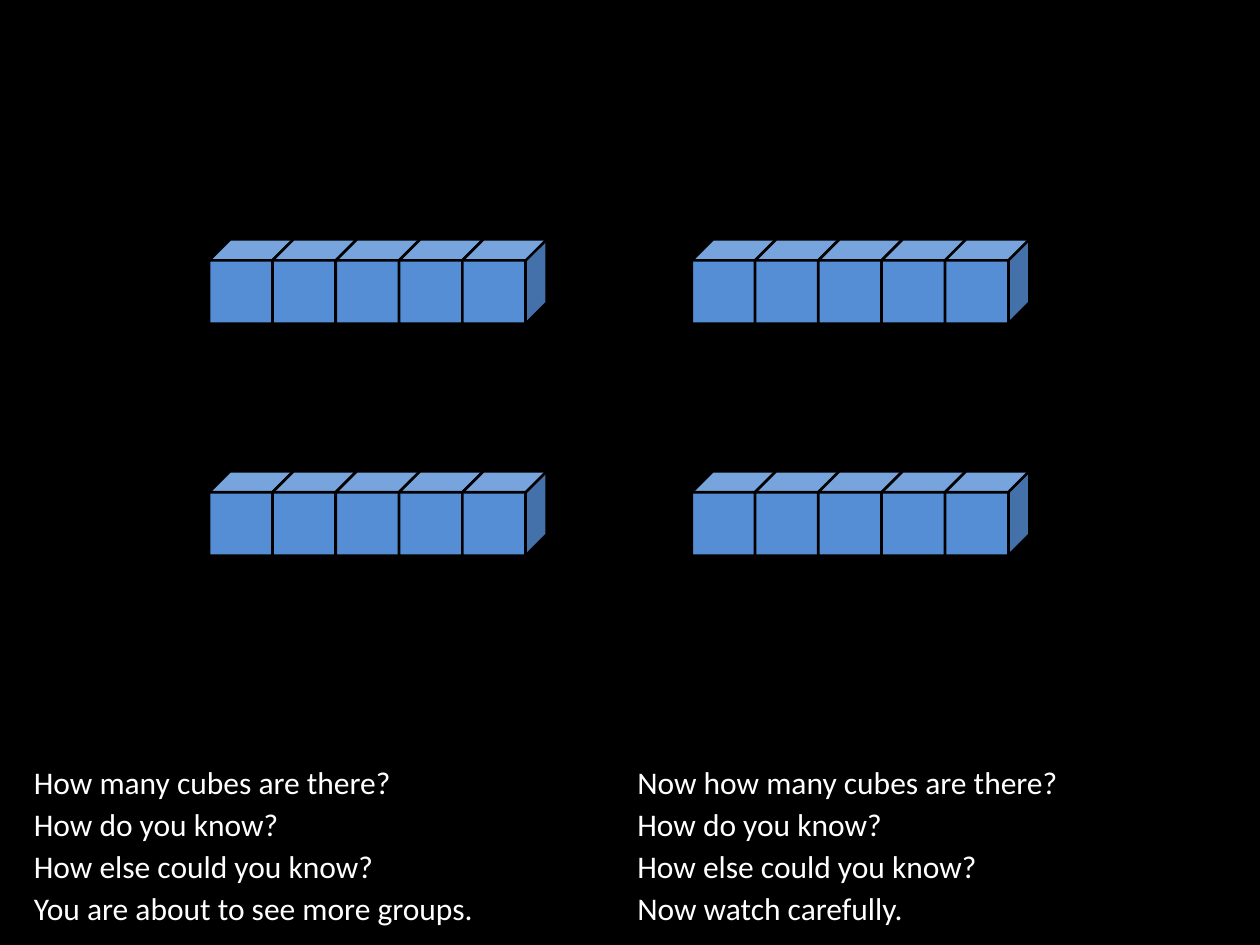
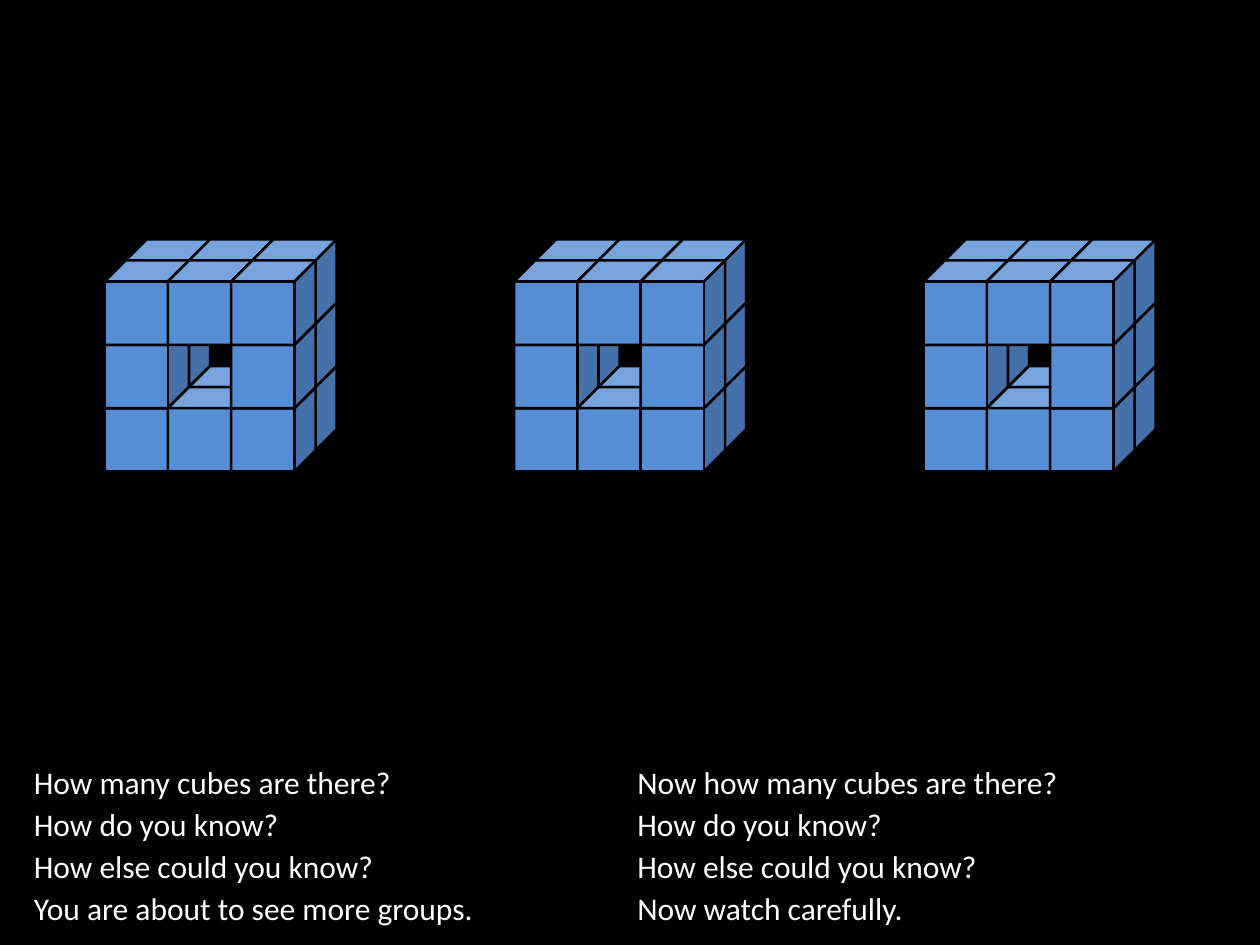
from itertools import product

from pptx import Presentation
from pptx.dml.color import RGBColor
from pptx.enum.shapes import MSO_SHAPE as Shape
from pptx.enum.text import MSO_AUTO_SIZE as Fit
from pptx.util import Inches, Pt

COLORS = {"back": "000000", "cube": "558ED5", "edge": "000000", "text": "FFFFFF"}
FONT = "Calibri"
SIDE = 0.67
DEPTH = SIDE / 4  # a cube's default slant
PITCH = SIDE - DEPTH  # the width of a cube's front face

# Each prompt comes with the width of its box.
PROMPTS = {
    0.17: [
        ("How many cubes are there?", 3.11),
        ("How do you know?", 2.21),
        ("How else could you know?", 2.98),
        ("You are about to see more groups.", 3.79),
    ],
    4.96: [
        ("Now how many cubes are there?", 3.58),
        ("How do you know?", 2.21),
        ("How else could you know?", 2.98),
        ("Now watch carefully.", 2.33),
    ],
}


def color(name):
    return RGBColor.from_string(COLORS[name])


def add_cube(group, left, top):
    cube = group.shapes.add_shape(
        Shape.CUBE, Inches(left), Inches(top), Inches(SIDE), Inches(SIDE)
    )
    cube.shadow.inherit = False
    cube.fill.solid()
    cube.fill.fore_color.rgb = color("cube")
    cube.line.color.rgb = color("edge")
    cube.line.width = Pt(1.5)


def add_row(slide, left, top, count=5):
    group = slide.shapes.add_group_shape()
    for col in range(count):
        add_cube(group, left + col * PITCH, top)


def add_ring(slide, left, top):
    """Stack two 3 by 3 layers without their middle cubes, back layer first."""
    group = slide.shapes.add_group_shape()
    for layer, col, row in product((1, 0), range(3), (2, 1, 0)):
        if (col, row) != (1, 1):
            add_cube(
                group,
                left + col * PITCH + layer * DEPTH,
                top + row * PITCH + (1 - layer) * DEPTH,
            )


def add_prompts(slide, left, top, lines):
    for i, (text, width) in enumerate(lines):
        box = slide.shapes.add_textbox(
            Inches(left), Inches(top + i / 3), Inches(width), Inches(0.4)
        )
        frame = box.text_frame
        frame.word_wrap = False
        frame.auto_size = Fit.SHAPE_TO_FIT_TEXT
        run = frame.paragraphs[0].add_run()
        run.text = text
        run.font.name = FONT
        run.font.size = Pt(18)
        run.font.color.rgb = color("text")


def add_page(deck, add_group, spots):
    """Add a slide with a group of cubes at each spot and the prompts below."""
    slide = deck.slides.add_slide(deck.slide_layouts[6])
    fill = slide.background.fill
    fill.solid()
    fill.fore_color.rgb = color("back")
    for left, top in spots:
        add_group(slide, left, top)
    for left, lines in PROMPTS.items():
        add_prompts(slide, left, 6.01, lines)


def main():
    deck = Presentation()
    deck.slide_width, deck.slide_height = Inches(10), Inches(7.5)
    add_page(deck, add_row, product((1.66, 5.49), (1.9, 3.74)))
    add_page(deck, add_ring, [(0.83 + i * 3.25, 1.9) for i in range(3)])
    deck.save("out.pptx")


if __name__ == "__main__":
    main()
